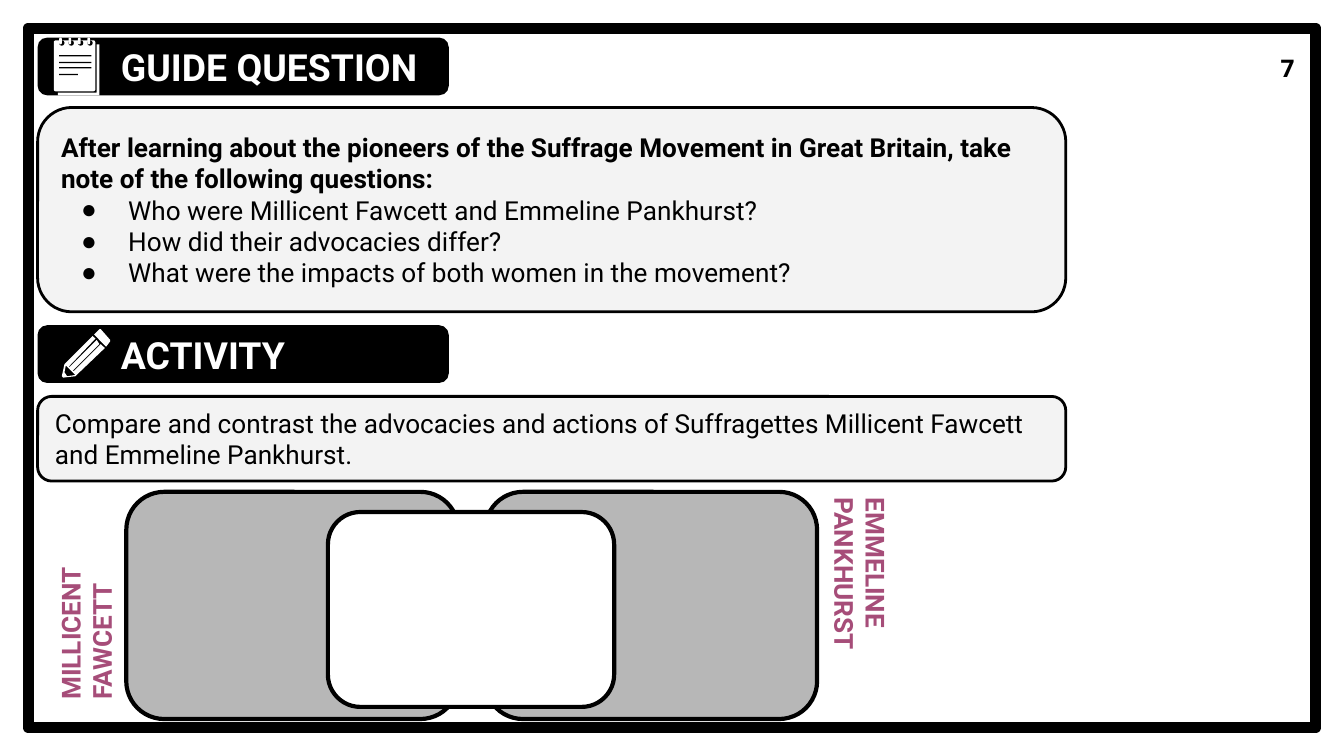
"""Build the suffrage movement guide question and activity slide."""
from lxml.etree import SubElement
from pptx import Presentation
from pptx.dml.color import RGBColor
from pptx.enum.shapes import MSO_SHAPE as Shape
from pptx.enum.text import MSO_ANCHOR as Anchor, MSO_AUTO_SIZE as AutoSize, PP_ALIGN as Align
from pptx.oxml.ns import qn
from pptx.util import Inches, Pt

COLORS = {"black": "000000", "white": "FFFFFF", "panel": "F3F3F3", "gray": "B7B7B7", "plum": "A64D79"}
WIDTH = 10
HEIGHT = WIDTH * 9 / 16
MARGIN, LEFT = 0.21, 0.28
PANEL_WIDTH, HEADING_WIDTH, HEADING_HEIGHT = 7.65, 3.06, 0.43
CORNER_INSET = 0.02

PAGE_NUMBER = "7"
HEADINGS = [("GUIDE QUESTION", 0.28), ("ACTIVITY", 2.42)]
INTRO = ("After learning about the pioneers of the Suffrage Movement in Great Britain, "
         "take note of the following questions:")
QUESTIONS = [
    "Who were Millicent Fawcett and Emmeline Pankhurst?",
    "How did their advocacies differ?",
    "What were the impacts of both women in the movement?",
]
TASK = ("Compare and contrast the advocacies and actions of Suffragettes "
        "Millicent Fawcett and Emmeline Pankhurst.")
VENN_PARTS = [
    ((0.94, 3.66, 2.47, 1.69), "gray"),
    ((3.61, 3.66, 2.47, 1.69), "gray"),
    ((2.44, 3.81, 2.13, 1.45), "white"),
]
SIDE_LABELS = [("MILLICENT FAWCETT", (-0.38, 4.19, 1.8, 0.43), 270),
               ("EMMELINE PANKHURST", (5.62, 4.29, 1.8, 0.43), 90)]

NOTE_EDGE = [[(72, 33), (72, 69), (43, 69), (43, 71), (74, 71), (74, 33)]]
NOTE_LINES = [(0.41, 0.24), (0.46, 0.24), (0.5, 0.24), (0.55, 0.14)]
PENCIL_END = [[(74, 245), (70, 249), (79, 258), (82, 254), (82, 253), (75, 245)]]
PENCIL_BODY = [
    [(69, 250), (48, 271), (46, 280), (47, 281), (56, 280), (78, 259), (75, 256), (55, 276),
     (54, 276), (74, 256), (72, 253), (52, 273), (51, 273), (71, 252)],
    [(49, 272), (56, 279), (50, 280), (48, 277)],
]


def color(name):
    return RGBColor.from_string(COLORS[name])


def place(shape, area):
    shape.left, shape.top, shape.width, shape.height = map(Inches, area)


def paint(shape, fill, line_width=0):
    shape.fill.solid()
    shape.fill.fore_color.rgb = color(fill)
    if line_width:
        shape.line.color.rgb = color("black")
        shape.line.width = Pt(line_width)
    else:
        shape.line.fill.background()


def add_block(shapes, kind, area, fill, line_width=0):
    block = shapes.add_shape(kind, *map(Inches, area))
    block.shadow.inherit = False
    paint(block, fill, line_width)
    return block


def set_frame(box, anchor=Anchor.MIDDLE):
    frame = box.text_frame
    frame.word_wrap = True
    frame.auto_size = AutoSize.NONE
    frame.vertical_anchor = anchor
    frame.margin_left = frame.margin_right = frame.margin_top = frame.margin_bottom = Inches(0.1)
    return frame


def write(para, text, size=14, ink="black", bold=False, font="Roboto", align=Align.LEFT):
    para.alignment = align
    para.space_before = Pt(0)
    span = para.add_run()
    span.text = text
    span.font.size, span.font.bold, span.font.name = Pt(size), bold, font
    span.font.color.rgb = color(ink)


def set_indent(para, margin, indent, bullet=None):
    props = para._p.get_or_add_pPr()
    props.set("marL", str(Inches(margin)))
    props.set("indent", str(Inches(indent)))
    if bullet:
        SubElement(props, qn("a:buChar"), char=bullet)
    else:
        SubElement(props, qn("a:buNone"))


def write_heading(box, text):
    para = set_frame(box).paragraphs[0]
    set_indent(para, 0, 0.5)
    write(para, text, 20, "white", True)


def add_outline(shapes, contours):
    first, *others = contours
    builder = shapes.build_freeform(*first[0], scale=Inches(0.01))
    builder.add_line_segments(first[1:])
    for contour in others:
        builder.move_to(*contour[0])
        builder.add_line_segments(contour[1:])
    outline = builder.convert_to_shape()
    outline.shadow.inherit = False
    paint(outline, "white")


def add_notepad(slide):
    icon = slide.shapes.add_group_shape().shapes
    add_outline(icon, NOTE_EDGE)
    add_block(icon, Shape.ROUNDED_RECTANGLE, (0.4, 0.3, 0.31, 0.38), "white").adjustments[0] = 0.05
    for column in range(4):
        x = 0.44 + column * 0.07
        add_block(icon, Shape.OVAL, (x, 0.3, 0.04, 0.04), "black")
        add_block(icon, Shape.ROUNDED_RECTANGLE, (x, 0.28, 0.02, 0.05), "white").adjustments[0] = 0.5
    for y, length in NOTE_LINES:
        add_block(icon, Shape.RECTANGLE, (0.44, y, length, 0.01), "black")


def add_pencil(slide):
    icon = slide.shapes.add_group_shape().shapes
    for contours in (PENCIL_END, PENCIL_BODY):
        add_outline(icon, contours)


def main():
    deck = Presentation()
    deck.slide_width, deck.slide_height = Inches(WIDTH), Inches(HEIGHT)
    slide = deck.slides.add_slide(deck.slide_layouts[1])
    shapes = slide.shapes
    title, body = slide.placeholders

    border = add_block(shapes, Shape.RECTANGLE,
                       (MARGIN, MARGIN, WIDTH - 2 * MARGIN, HEIGHT - 2 * MARGIN), "white", 6)
    guide_bar, activity_bar = [
        add_block(shapes, Shape.ROUNDED_RECTANGLE, (LEFT, top, HEADING_WIDTH, HEADING_HEIGHT), "black")
        for _, top in HEADINGS]
    for index, block in enumerate((border, guide_bar), start=2):
        shapes._spTree.insert(index, block._element)

    number = shapes.add_textbox(*map(Inches, (9.13, 0.29, 0.6, 0.43)))
    write(set_frame(number).paragraphs[0], PAGE_NUMBER, 13, bold=True, font="Open Sans", align=Align.RIGHT)

    (guide, guide_top), (activity, _) = HEADINGS
    place(title, (LEFT + CORNER_INSET, guide_top, HEADING_WIDTH - CORNER_INSET, HEADING_HEIGHT))
    write_heading(title, guide)
    write_heading(activity_bar, activity)
    add_notepad(slide)
    add_pencil(slide)

    place(body, (LEFT, 0.8, PANEL_WIDTH, 1.52))
    geometry = SubElement(body._element.spPr, qn("a:prstGeom"), prst="roundRect")
    SubElement(geometry, qn("a:avLst"))
    paint(body, "panel", 1.5)
    frame = set_frame(body)
    set_indent(frame.paragraphs[0], 0, 0)
    write(frame.paragraphs[0], INTRO, bold=True)
    for question in QUESTIONS:
        para = frame.add_paragraph()
        set_indent(para, 0.5, -0.35, "●")
        write(para, question)

    task = add_block(shapes, Shape.ROUNDED_RECTANGLE, (LEFT, 2.95, PANEL_WIDTH, 0.63), "panel", 1.5)
    write(set_frame(task).paragraphs[0], TASK)

    for area, fill in VENN_PARTS:
        add_block(shapes, Shape.ROUNDED_RECTANGLE, area, fill, 2.25)
    for text, area, turn in SIDE_LABELS:
        label = shapes.add_textbox(*map(Inches, area))
        label.rotation = turn
        write(set_frame(label, Anchor.TOP).paragraphs[0], text, ink="plum", bold=True)

    deck.save("out.pptx")


if __name__ == "__main__":
    main()
